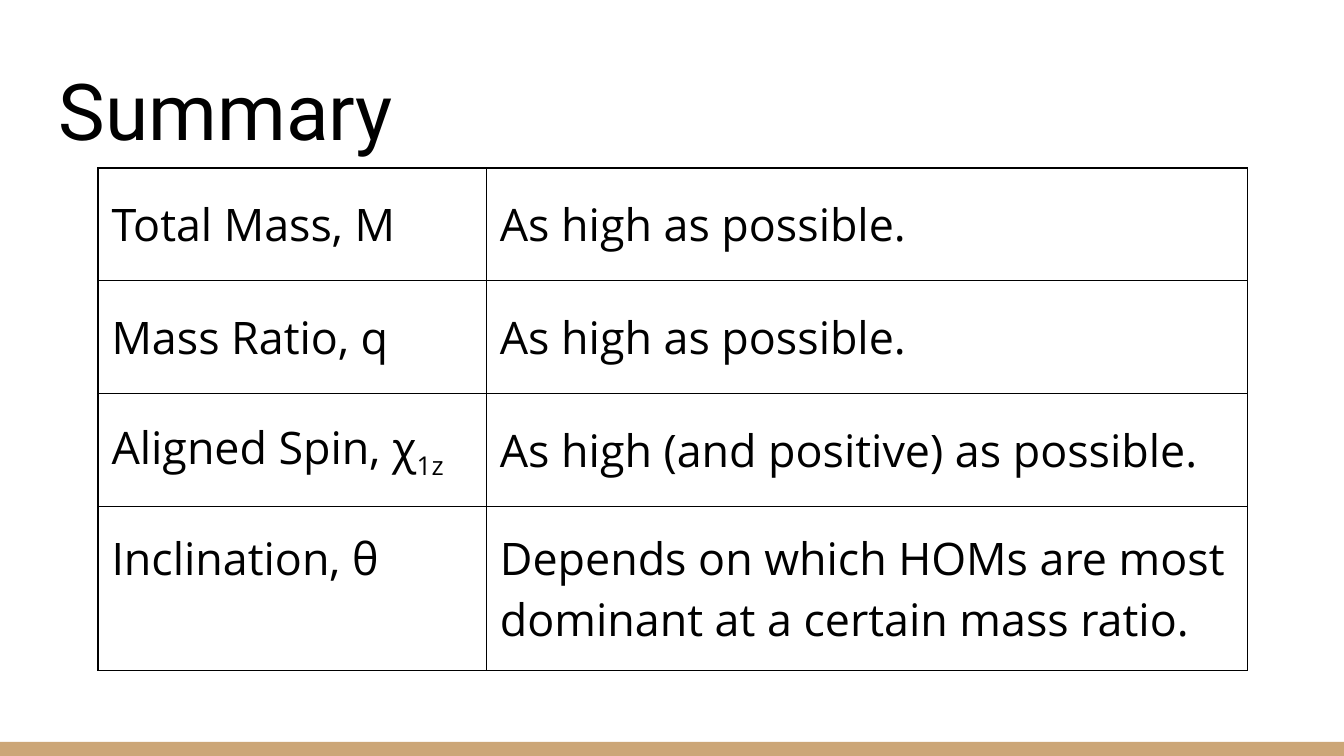
"""Build a summary slide with a table of parameters and their best values."""
from dataclasses import dataclass

from lxml.etree import SubElement as Sub
from pptx import Presentation
from pptx.dml.color import RGBColor as Rgb
from pptx.enum.shapes import MSO_SHAPE as Kind
from pptx.enum.text import MSO_ANCHOR as Anchor
from pptx.oxml.ns import qn
from pptx.util import Inches, Pt


@dataclass(frozen=True)
class Theme:
    ink: str = "000000"
    band: str = "CCA677"
    head: tuple = ("Roboto", 42)
    body: tuple = ("Open Sans", 24)
    rule: float = 0.75


theme = Theme()


def write(para, text, style):
    run = para.add_run()
    run.text = text
    name, size = style
    for key, value in {"name": name, "size": Pt(size)}.items():
        setattr(run.font, key, value)
    run.font.color.rgb = Rgb.from_string(theme.ink)
    return run


def edge(cell):
    props = cell._tc.get_or_add_tcPr()
    for side in ("a:lnL", "a:lnR", "a:lnT", "a:lnB"):
        line = Sub(props, qn(side), w=str(Pt(theme.rule)))
        fill = Sub(line, qn("a:solidFill"))
        Sub(fill, qn("a:srgbClr"), val=theme.ink)
    cell.fill.background()


deck = Presentation()
wide = Inches(10)
high = wide * 9 // 16
deck.slide_width, deck.slide_height = wide, high
slide = deck.slides.add_slide(deck.slide_layouts[6])
shapes = slide.shapes

top = Inches(5.52)
band = shapes.add_shape(Kind.RECTANGLE, 0, top, wide, high - top)
band.shadow.inherit = False
band.fill.solid()
band.fill.fore_color.rgb = Rgb.from_string(theme.band)
band.line.fill.background()

pad = Inches(0.1)
inset = {f"margin_{side}": pad for side in ("left", "right", "top", "bottom")}

title = shapes.add_textbox(Inches(0.34), Inches(0.35), Inches(9.32), Inches(0.91))
frame = title.text_frame
look = {**inset, "word_wrap": True, "vertical_anchor": Anchor.BOTTOM}
for key, value in look.items():
    setattr(frame, key, value)
write(frame.paragraphs[0], "Summary", theme.head)

rows = [
    ("Total Mass, M", "As high as possible."),
    ("Mass Ratio, q", "As high as possible."),
    ("Aligned Spin, χ", "As high (and positive) as possible."),
    ("Inclination, θ",
     "Depends on which HOMs are most dominant at a certain mass ratio."),
]
widths = [2.89, 5.66]
heights = [0.84] * 3 + [1.22]
table = shapes.add_table(
    len(rows), len(widths), Inches(0.73), Inches(1.25),
    Inches(sum(widths)), Inches(sum(heights))).table
for key in ("first_row", "horz_banding"):
    setattr(table, key, False)
for col, width in zip(table.columns, widths):
    col.width = Inches(width)
for row, height, texts in zip(table.rows, heights, rows):
    row.height = Inches(height)
    for cell, text in zip(row.cells, texts):
        for key, value in {**inset, "vertical_anchor": Anchor.MIDDLE}.items():
            setattr(cell, key, value)
        edge(cell)
        write(cell.text_frame.paragraphs[0], text, theme.body)

spin = table.cell(2, 0).text_frame.paragraphs[0]
sub = write(spin, "1z", theme.body)
sub._r.get_or_add_rPr().set("baseline", "-25000")
table.cell(3, 0).margin_bottom = Inches(0.55)

deck.save("out.pptx")
